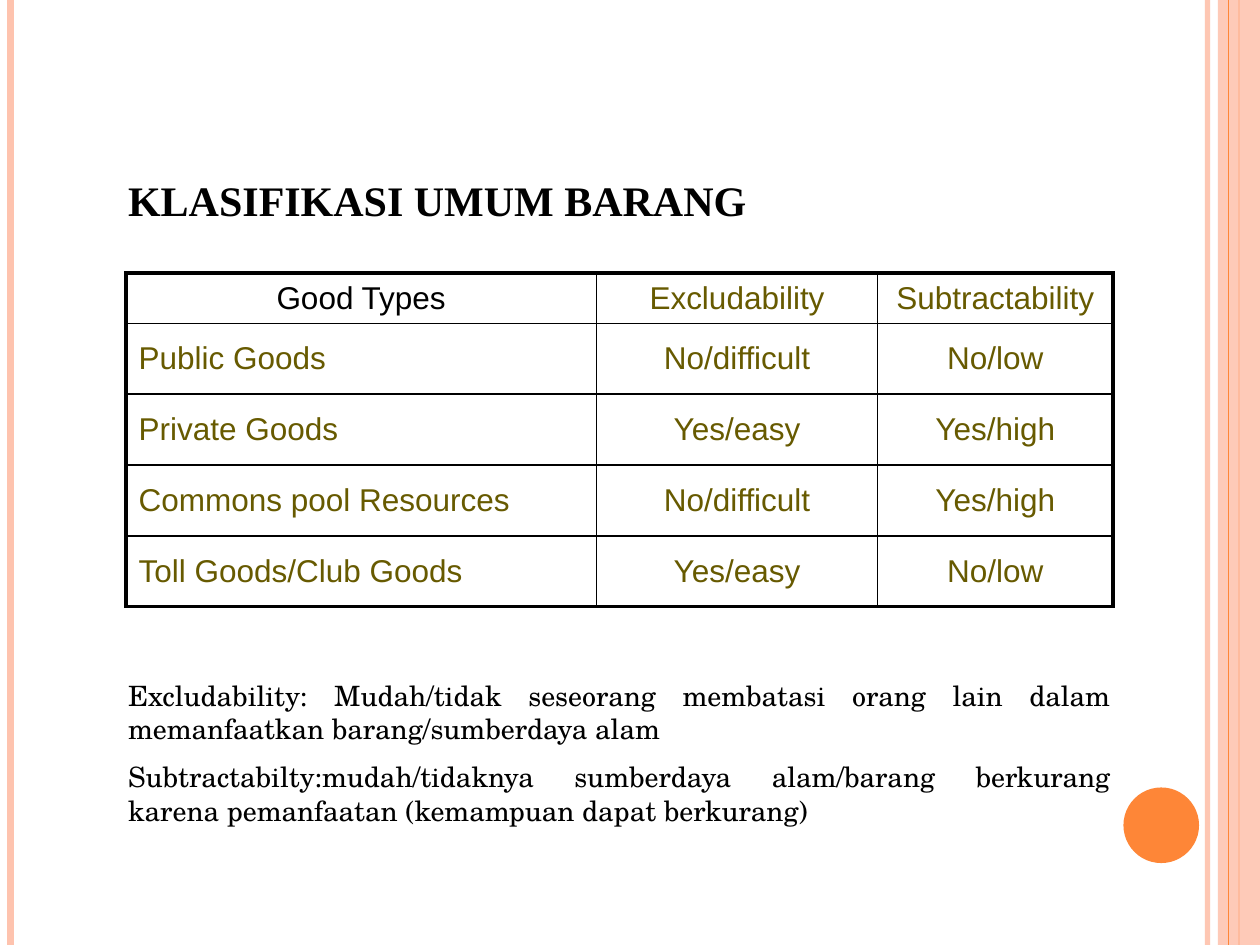
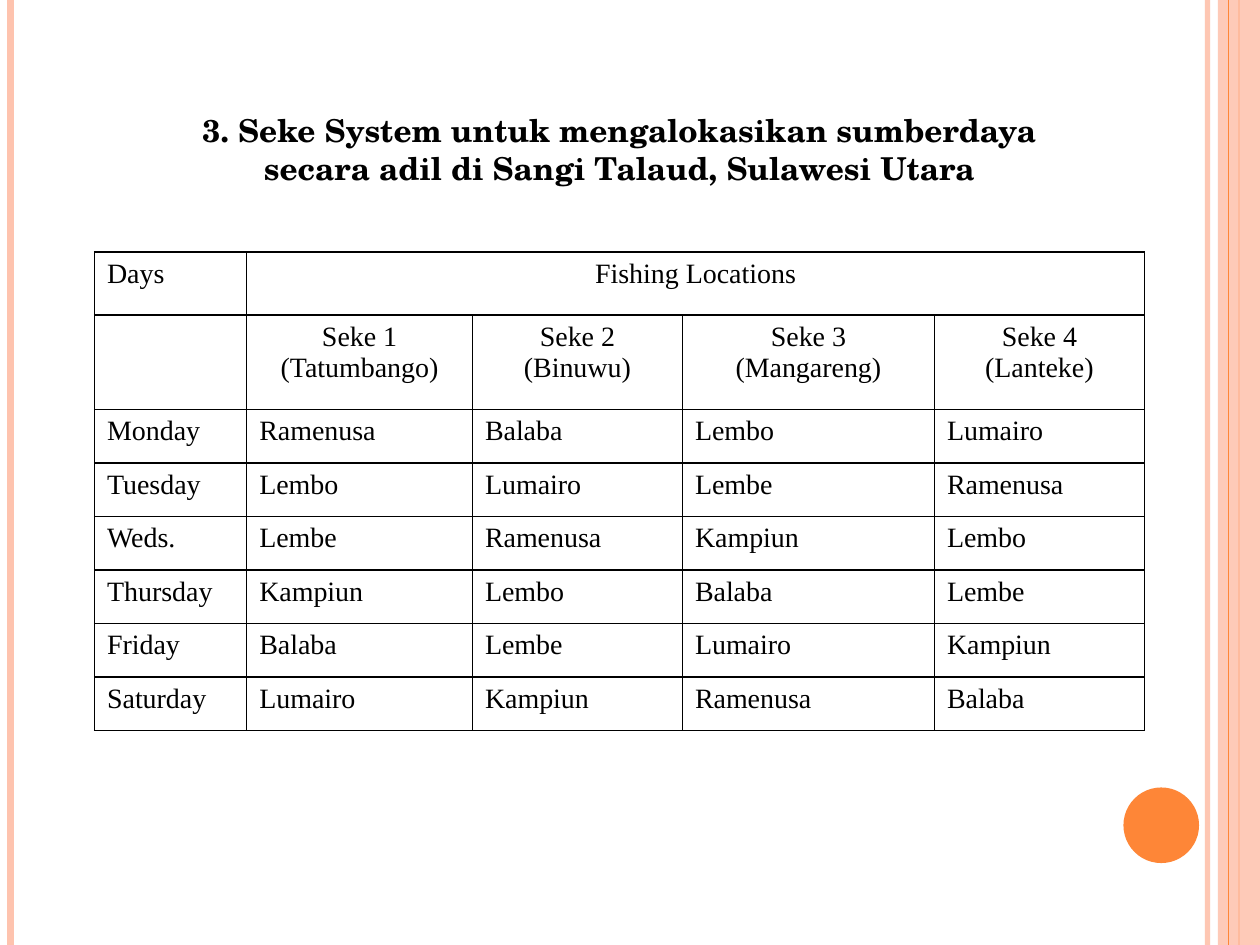
from lxml import etree
from pptx import Presentation
from pptx.dml.color import RGBColor
from pptx.enum.shapes import MSO_CONNECTOR, MSO_SHAPE
from pptx.enum.text import MSO_ANCHOR, MSO_AUTO_SIZE, PP_ALIGN
from pptx.oxml.ns import qn
from pptx.util import Inches, Pt

STRAIGHT = MSO_CONNECTOR.STRAIGHT
RECTANGLE, OVAL = MSO_SHAPE.RECTANGLE, MSO_SHAPE.OVAL
TOP, MIDDLE = MSO_ANCHOR.TOP, MSO_ANCHOR.MIDDLE
FIXED_SIZE = MSO_AUTO_SIZE.NONE
LEFT, CENTER, JUSTIFY = PP_ALIGN.LEFT, PP_ALIGN.CENTER, PP_ALIGN.JUSTIFY

PEACH = RGBColor(0xFE, 0xC3, 0xAE)
ORANGE = RGBColor(0xFE, 0x86, 0x37)
OLIVE = RGBColor(0x67, 0x5A, 0x00)
BLACK = RGBColor(0, 0, 0)
SANS, SERIF, SCHOLA = "Arial", "Times New Roman", "TeX Gyre Schola"

COLUMNS, ROWS = 120, 90
CELL = Inches(10) / COLUMNS
THIN, THICK = 1, 2.25
TITLE_AND_BODY, TITLE_ONLY = 1, 5

GOODS = [
    ["Good Types", "Excludability", "Subtractability"],
    ["Public Goods", "No/difficult", "No/low"],
    ["Private Goods", "Yes/easy", "Yes/high"],
    ["Commons pool Resources", "No/difficult", "Yes/high"],
    ["Toll Goods/Club Goods", "Yes/easy", "No/low"],
]
DEFINITIONS = [
    "Excludability: Mudah/tidak seseorang membatasi orang lain dalam "
    "memanfaatkan barang/sumberdaya alam",
    "Subtractabilty:mudah/tidaknya sumberdaya alam/barang berkurang karena "
    "pemanfaatan (kemampuan dapat berkurang)",
]
FISHING = [
    ["Days", "Fishing Locations", "", "", ""],
    ["", "Seke 1 (Tatumbango)", "Seke 2 (Binuwu)", "Seke 3 (Mangareng)", "Seke 4 (Lanteke)"],
    ["Monday", "Ramenusa", "Balaba", "Lembo", "Lumairo"],
    ["Tuesday", "Lembo", "Lumairo", "Lembe", "Ramenusa"],
    ["Weds.", "Lembe", "Ramenusa", "Kampiun", "Lembo"],
    ["Thursday", "Kampiun", "Lembo", "Balaba", "Lembe"],
    ["Friday", "Balaba", "Lembe", "Lumairo", "Kampiun"],
    ["Saturday", "Lumairo", "Kampiun", "Ramenusa", "Balaba"],
]


def grid(*counts):
    return [round(count * CELL) for count in counts]


def style(para, font, size, color=BLACK, bold=False, align=LEFT):
    para.alignment = align
    for span in para.runs:
        span.font.name = font
        span.font.size = Pt(size)
        span.font.color.rgb = color
        span.font.bold = bold


def set_opacity(shape, percent):
    color = next(shape.element.spPr.iter(qn("a:srgbClr")))
    etree.SubElement(color, qn("a:alpha")).set("val", str(percent * 1000))


def add_stripe(page, column, color, width):
    stripe = page.shapes.add_connector(STRAIGHT, *grid(column, 0, column, ROWS))
    stripe.line.color.rgb = color
    stripe.line.width = Pt(width)
    etree.SubElement(stripe.element.spPr, qn("a:effectLst"))
    return stripe


def add_block(page, kind, place, color):
    block = page.shapes.add_shape(kind, *grid(*place))
    block.shadow.inherit = False
    block.fill.solid()
    block.fill.fore_color.rgb = color
    block.line.fill.background()
    return block


def decorate_master(deck, page):
    inner = add_stripe(page, 115, PEACH, 3)
    left = add_stripe(page, 1, PEACH, 4.5)
    outer = add_stripe(page, 118, ORANGE, 1.5)
    band = add_block(page, RECTANGLE, (116, 0, 4, ROWS), PEACH)
    hairline = add_stripe(page, 117, ORANGE, 0.75)
    disc = add_block(page, OVAL, (107, 75, 7.2, 7.2), ORANGE)
    set_opacity(inner, 93)
    set_opacity(band, 87)
    tree = deck.slide_master.element.cSld.spTree
    for number, shape in enumerate((inner, left, outer, band, hairline, disc), 20):
        next(shape.element.iter(qn("p:cNvPr"))).set("id", str(number))
        tree.append(shape.element)


def place_text(box, place, anchor):
    box.left, box.top, box.width, box.height = grid(*place)
    frame = box.text_frame
    frame.auto_size = FIXED_SIZE
    frame.word_wrap = True
    frame.vertical_anchor = anchor
    return frame


def set_title(page, text, place, font, size, align):
    frame = place_text(page.shapes.title, place, MIDDLE)
    frame.text = text
    style(frame.paragraphs[0], font, size, bold=True, align=align)


def set_body(page, lines, place):
    frame = place_text(page.placeholders[1], place, TOP)
    frame.text = "\n".join(lines)
    for para in frame.paragraphs:
        style(para, SCHOLA, 16, align=JUSTIFY)
        para.space_before = Pt(8)
        settings = para._p.get_or_add_pPr()
        settings.set("marL", "0")
        settings.set("indent", "0")
        etree.SubElement(settings, qn("a:buNone"))


def set_borders(cell, widths):
    settings = cell._tc.get_or_add_tcPr()
    for side, width in zip(("lnL", "lnR", "lnT", "lnB"), widths):
        line = etree.SubElement(settings, qn("a:" + side), w=str(Pt(width)))
        fill = etree.SubElement(line, qn("a:solidFill"))
        etree.SubElement(fill, qn("a:srgbClr"), val=str(BLACK))


def add_grid_table(page, values, corner, widths, heights, frame_width, format_cell):
    last_row, last_column = len(heights) - 1, len(widths) - 1
    place = grid(*corner, sum(widths), sum(heights))
    table = page.shapes.add_table(len(heights), len(widths), *place).table
    table.first_row = table.horz_banding = False
    for column, width in zip(table.columns, grid(*widths)):
        column.width = width
    for row, height in zip(table.rows, grid(*heights)):
        row.height = height
    for r, texts in enumerate(values):
        for c, text in enumerate(texts):
            cell = table.cell(r, c)
            on_frame = (c == 0, c == last_column, r == 0, r == last_row)
            set_borders(cell, [frame_width if edge else THIN for edge in on_frame])
            cell.fill.background()
            cell.text = text
            format_cell(cell, r, c)
    return table


def format_goods(cell, row, column):
    cell.vertical_anchor = MIDDLE
    color = BLACK if row == column == 0 else OLIVE
    align = LEFT if row and column == 0 else CENTER
    style(cell.text_frame.paragraphs[0], SANS, 18, color, align=align)


def format_fishing(cell, row, column):
    align = CENTER if row < 2 and column else JUSTIFY
    style(cell.text_frame.paragraphs[0], SERIF, 16, align=align)


def main():
    deck = Presentation()
    deck.slide_width, deck.slide_height = grid(COLUMNS, ROWS)

    goods_page = deck.slides.add_slide(deck.slide_layouts[TITLE_AND_BODY])
    decorate_master(deck, goods_page)
    set_title(goods_page, "KLASIFIKASI UMUM BARANG", (11, 16, 63, 6), SERIF, 24, JUSTIFY)
    add_grid_table(goods_page, GOODS, (12, 26), [44.8, 26.8, 22.4],
                   [4.8] + [6.75] * 4, THICK, format_goods)
    set_body(goods_page, DEFINITIONS, (11, 64, 96, 15.6))

    fishing_page = deck.slides.add_slide(deck.slide_layouts[TITLE_ONLY])
    set_title(fishing_page,
              "3. Seke System untuk mengalokasikan sumberdaya secara adil "
              "di Sangi Talaud, Sulawesi Utara",
              (18, 10, 82, 8.4), SCHOLA, 18, CENTER)
    schedule = add_grid_table(fishing_page, FISHING, (9, 24), [14.5, 21.5, 20, 24, 20],
                              [6, 9] + [5.1] * 6, THIN, format_fishing)
    schedule.cell(0, 1).merge(schedule.cell(0, 4))

    deck.save("out.pptx")


if __name__ == "__main__":
    main()
